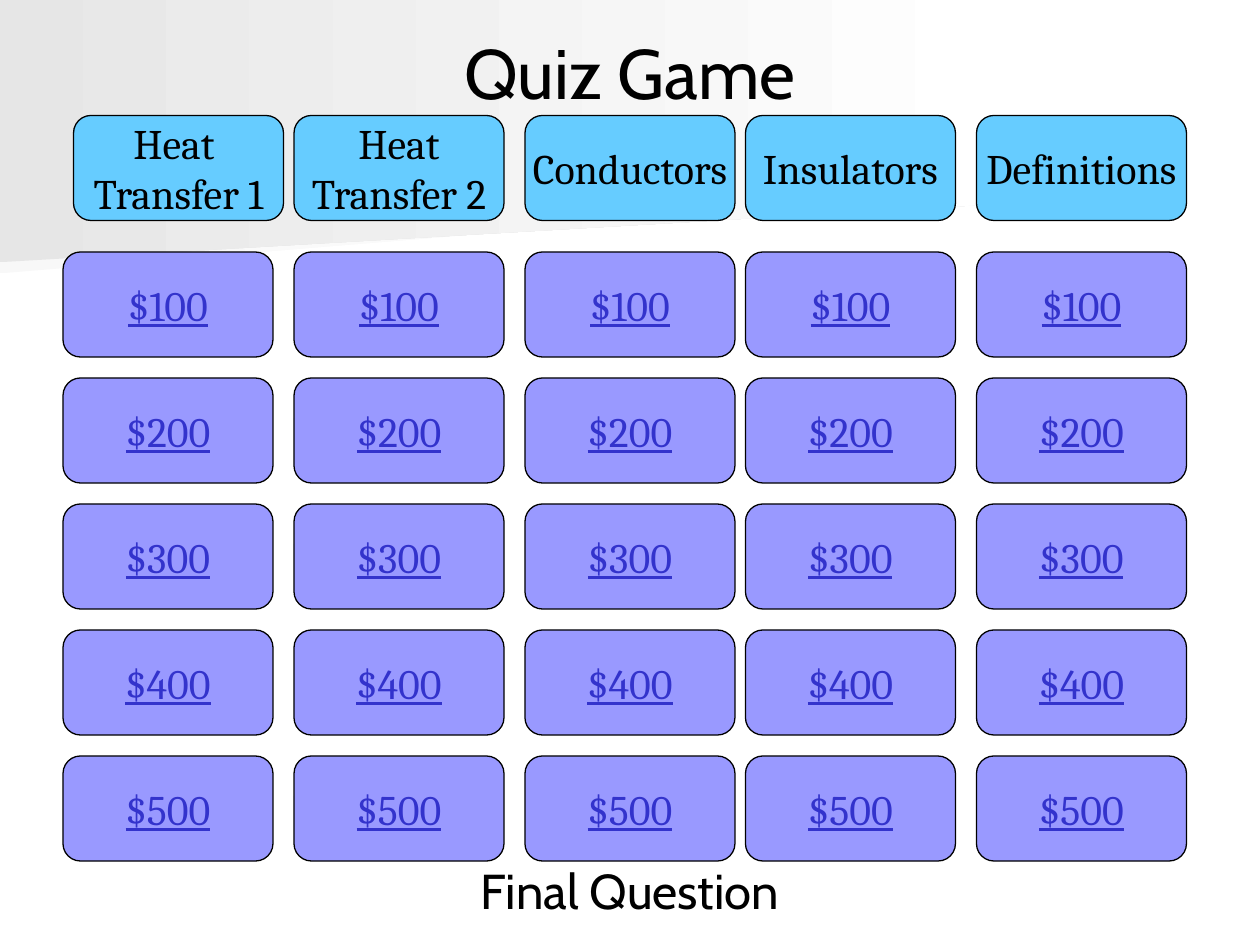
"""Build a quiz board slide with five topics and five prize rows."""
from pptx import Presentation
from pptx.dml.color import RGBColor
from pptx.enum.shapes import MSO_SHAPE
from pptx.enum.text import MSO_ANCHOR, PP_ALIGN
from pptx.util import Pt

TOPICS = [
    (36, 42, ["Heat ", "Transfer 1"]),
    (168, 168, ["Heat", "Transfer 2"]),
    (300, 300, ["Conductors"]),
    (426, 426, ["Insulators"]),
    (558, 558, ["Definitions"]),
]
PRIZES = ["$100", "$200", "$300", "$400", "$500"]
TITLES = [("Quiz Game", 21.6, 40), ("Final Question", 489.6, 28)]
BANDS = [
    ("pale", [(560.2, 110.2), (0, 156.2), (0, 72.7), (560.9, 72.7), (560.2, 92.2)]),
    ("gray", [(570.2, 116.6), (0, 149.8), (0, 0), (570.2, 0)]),
]
COLORS = {
    "pale": "F8F8F8", "gray": "E6E6E6", "white": "FFFFFF", "black": "000000",
    "topic": "66CCFF", "prize": "9999FF", "link": "3333CC",
}
CARD_W, CARD_H = 120, 60
TOPIC_Y, PRIZE_Y, STEP = 66, 144, 72


def color(name):
    return RGBColor.from_string(COLORS[name])


def write(shape, lines, size, face, ink, line=False, wrap=True):
    frame = shape.text_frame
    frame.word_wrap = wrap
    frame.vertical_anchor = MSO_ANCHOR.MIDDLE
    for i, text in enumerate(lines):
        para = frame.paragraphs[0] if i == 0 else frame.add_paragraph()
        para.alignment = PP_ALIGN.CENTER
        run = para.add_run()
        run.text = text
        font = run.font
        font.size, font.name = Pt(size), face
        font.color.rgb = color(ink)
        if line:
            font.underline = True


def add_band(slide, tone, points):
    start, *rest = [(Pt(x), Pt(y)) for x, y in points]
    pen = slide.shapes.build_freeform(*start)
    pen.add_line_segments(rest, close=True)
    band = pen.convert_to_shape()
    band.shadow.inherit = False
    band.line.fill.background()
    band.fill.gradient()
    band.fill.gradient_angle = 0
    for stop, name in zip(band.fill.gradient_stops, (tone, "white")):
        stop.color.rgb = color(name)


def add_card(slide, x, y, lines, fill, ink, line=False):
    card = slide.shapes.add_shape(
        MSO_SHAPE.FLOWCHART_ALTERNATE_PROCESS, Pt(x), Pt(y), Pt(CARD_W), Pt(CARD_H))
    card.shadow.inherit = False
    card.fill.solid()
    card.fill.fore_color.rgb = color(fill)
    card.line.color.rgb = color("black")
    card.line.width = Pt(0.75)
    write(card, lines, 24, "Cambria", ink, line, wrap=False)


def main():
    deck = Presentation()
    deck.slide_width, deck.slide_height = Pt(720), Pt(540)
    slide = deck.slides.add_slide(deck.slide_layouts[6])
    for tone, points in BANDS:
        add_band(slide, tone, points)
    for text, y, size in TITLES:
        box = slide.shapes.add_textbox(Pt(36), Pt(y), Pt(648), Pt(38.2))
        write(box, [text], size, "Cabin", "black")
    for x, head_x, lines in TOPICS:
        add_card(slide, head_x, TOPIC_Y, lines, "topic", "black")
        for row, prize in enumerate(PRIZES):
            add_card(slide, x, PRIZE_Y + row * STEP, [prize], "prize", "link", line=True)
    deck.save("out.pptx")


if __name__ == "__main__":
    main()
